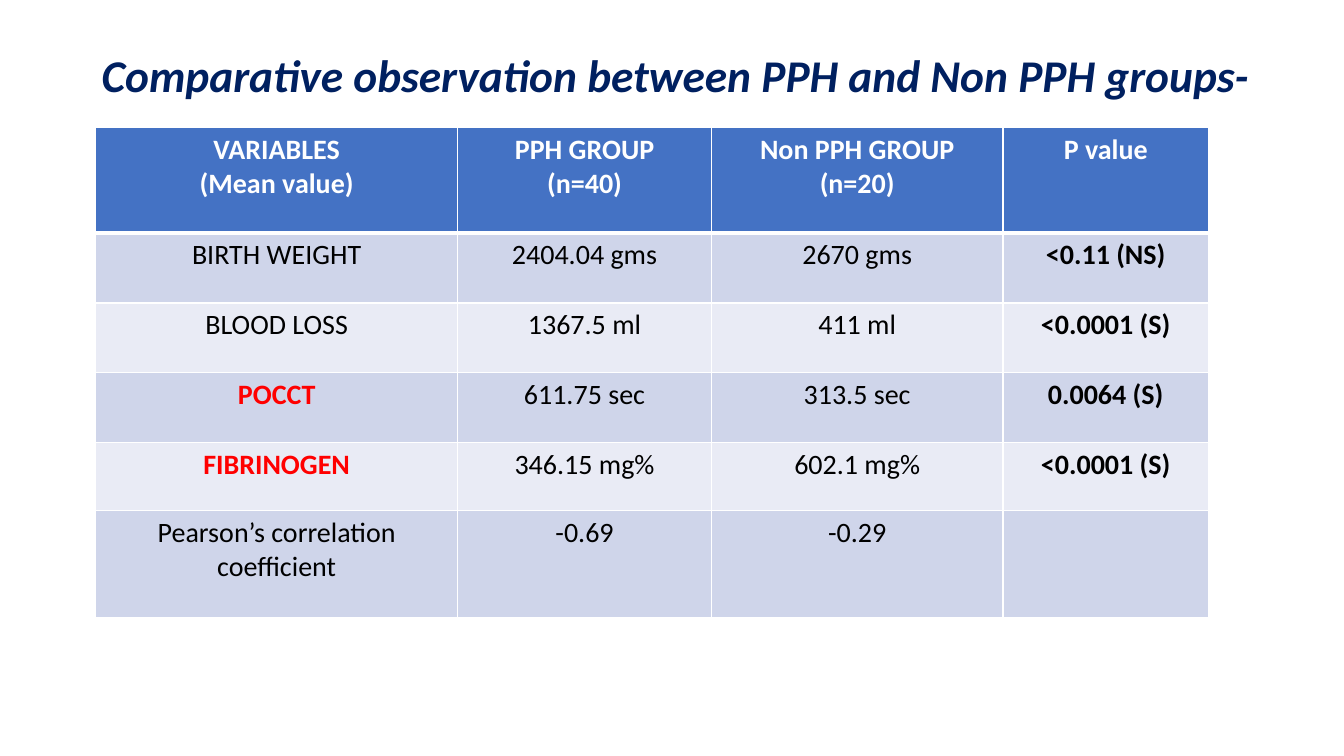
from lxml import etree
from pptx import Presentation
from pptx.dml.color import RGBColor
from pptx.enum import text
from pptx.oxml import ns
from pptx.util import Pt

TITLE = "Comparative observation between PPH and Non PPH groups-"
HEADER = ["VARIABLES\n(Mean value)", "PPH GROUP\n(n=40)", "Non PPH GROUP\n(n=20)", "P value"]
OBSERVATIONS = [
    ["BIRTH WEIGHT", "2404.04 gms", "2670 gms", "<0.11 (NS)"],
    ["BLOOD LOSS", "1367.5 ml", "411 ml", "<0.0001 (S)"],
    ["POCCT", "611.75 sec", "313.5 sec", "0.0064 (S)"],
    ["FIBRINOGEN", "346.15 mg%", "602.1 mg%", "<0.0001 (S)"],
    ["Pearson’s correlation coefficient", "-0.69", "-0.29", ""],
]
HIGHLIGHTED = {"POCCT", "FIBRINOGEN"}

TITLE_BOX = (65.5, 24.5, 849, 62)
TABLE_LEFT, TABLE_TOP = 68.4, 90.9
COLUMN_WIDTHS = [258.5, 181.4, 208.1, 147]
ROW_HEIGHTS = [75.5, 50, 50, 50, 48.4, 76.3]

NAVY, BLUE, WHITE, BLACK, RED = "002060", "4472C4", "FFFFFF", "000000", "FF0000"
BANDS = ["CFD5EA", "E9EBF5"]


def rgb(code):
    return RGBColor.from_string(code)


def style_font(font, color, **formats):
    font.color.rgb = rgb(color)
    for attribute, value in {"name": "Calibri", **formats}.items():
        setattr(font, attribute, value)


def add_borders(cell, bottom_width):
    """Draw white rules on all four sides, ahead of the cell's fill."""
    properties = cell._tc.get_or_add_tcPr()
    widths = {"L": 1, "R": 1, "T": 1, "B": bottom_width}
    for place, (side, width) in enumerate(widths.items()):
        line = etree.Element(ns.qn("a:ln" + side), w=str(Pt(width)))
        fill = etree.SubElement(line, ns.qn("a:solidFill"))
        etree.SubElement(fill, ns.qn("a:srgbClr"), val=WHITE)
        properties.insert(place, line)


def add_title(slide):
    frame = slide.shapes.add_textbox(*map(Pt, TITLE_BOX)).text_frame
    frame.word_wrap = True
    frame.vertical_anchor = text.MSO_ANCHOR.MIDDLE
    heading = frame.paragraphs[0]
    heading.line_spacing = 0.9
    run = heading.add_run()
    run.text = TITLE
    style_font(run.font, NAVY, size=Pt(32.4), bold=True, italic=True)


def add_comparison(slide):
    rows = [HEADER] + OBSERVATIONS
    table = slide.shapes.add_table(
        len(rows), len(HEADER), Pt(TABLE_LEFT), Pt(TABLE_TOP),
        Pt(sum(COLUMN_WIDTHS)), Pt(sum(ROW_HEIGHTS))).table
    for column, width in zip(table.columns, COLUMN_WIDTHS):
        column.width = Pt(width)
    for r, (values, height) in enumerate(zip(rows, ROW_HEIGHTS)):
        table.rows[r].height = Pt(height)
        is_header = r == 0
        for c, value in enumerate(values):
            cell = table.cell(r, c)
            cell.text = value
            cell.fill.solid()
            cell.fill.fore_color.rgb = rgb(BLUE if is_header else BANDS[(r - 1) % 2])
            add_borders(cell, 3 if is_header else 1)
            highlighted = value in HIGHLIGHTED
            color = WHITE if is_header else RED if highlighted else BLACK
            bold = is_header or highlighted or c == len(HEADER) - 1
            for paragraph in cell.text_frame.paragraphs:
                paragraph.alignment = text.PP_ALIGN.CENTER
                for run in paragraph.runs:
                    style_font(run.font, color, size=Pt(20), bold=bold)


def main():
    deck = Presentation()
    deck.slide_width, deck.slide_height = Pt(960), Pt(540)
    slide = deck.slides.add_slide(deck.slide_layouts[6])
    add_title(slide)
    add_comparison(slide)
    deck.save("out.pptx")


if __name__ == "__main__":
    main()
